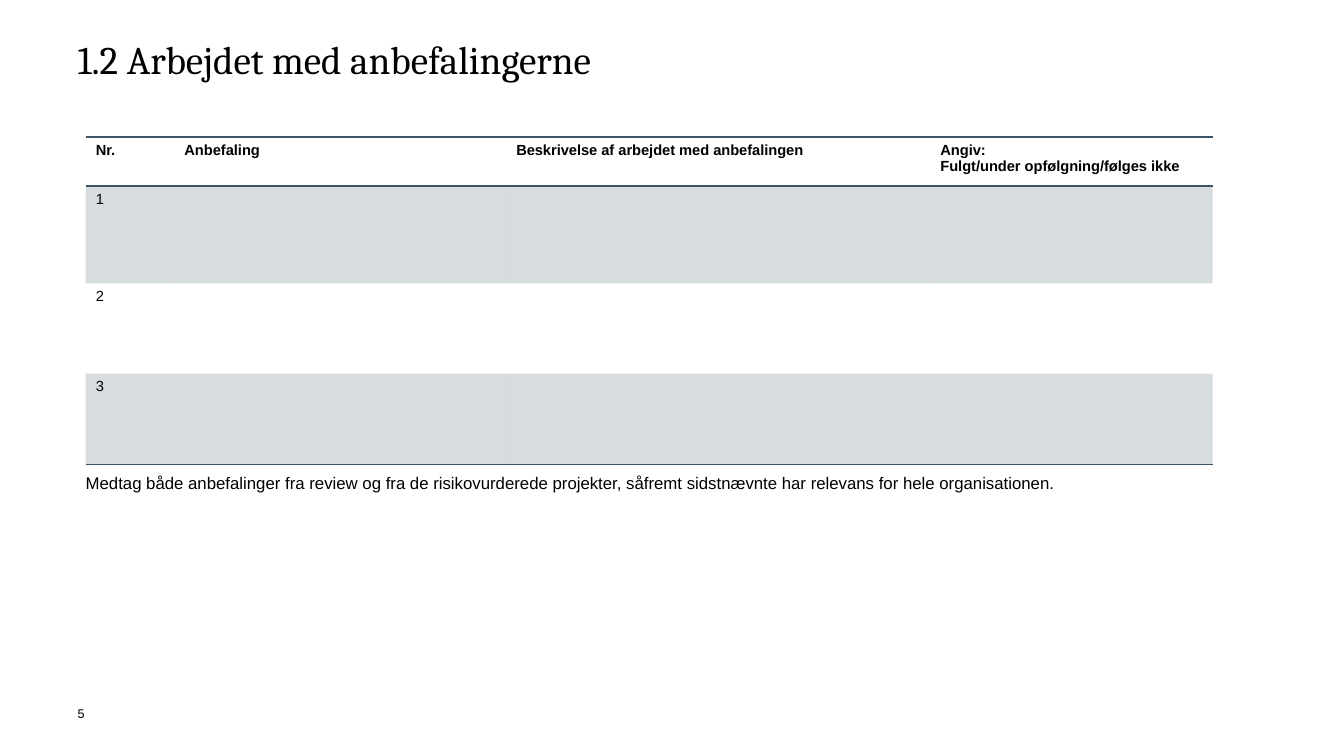
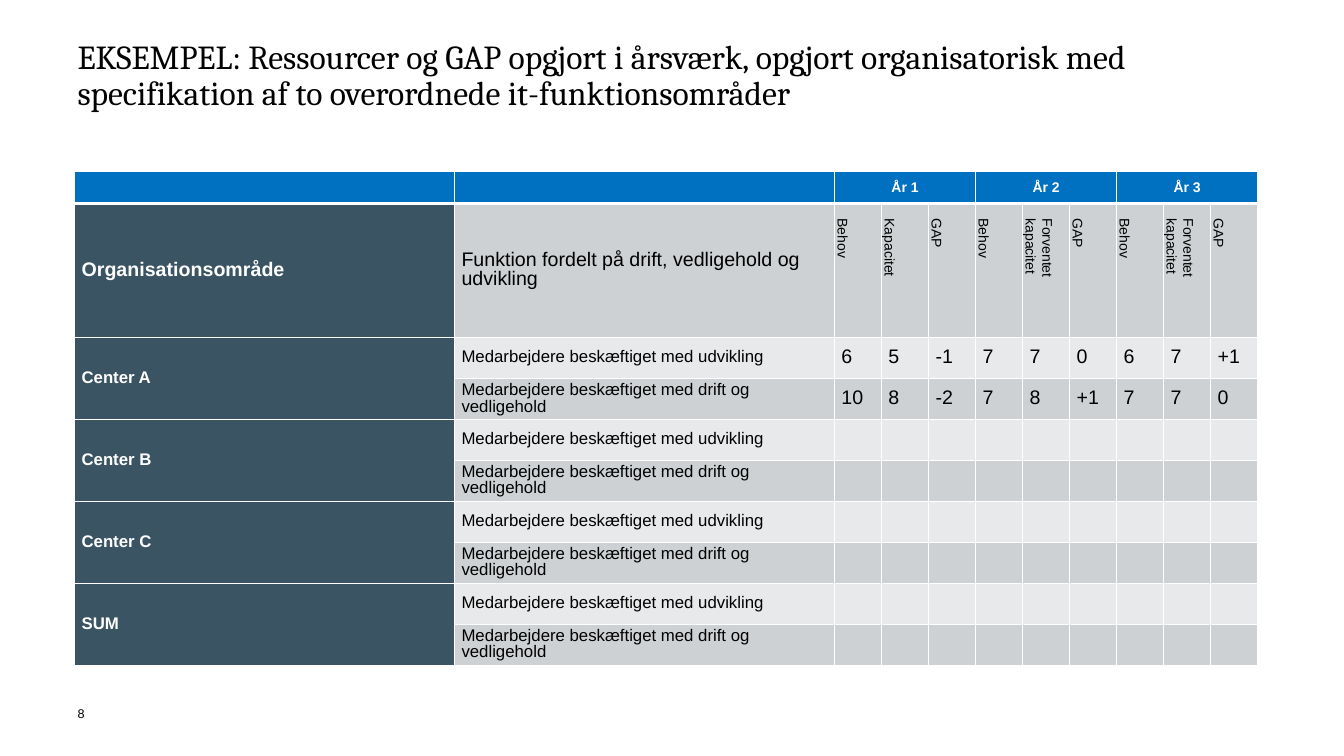
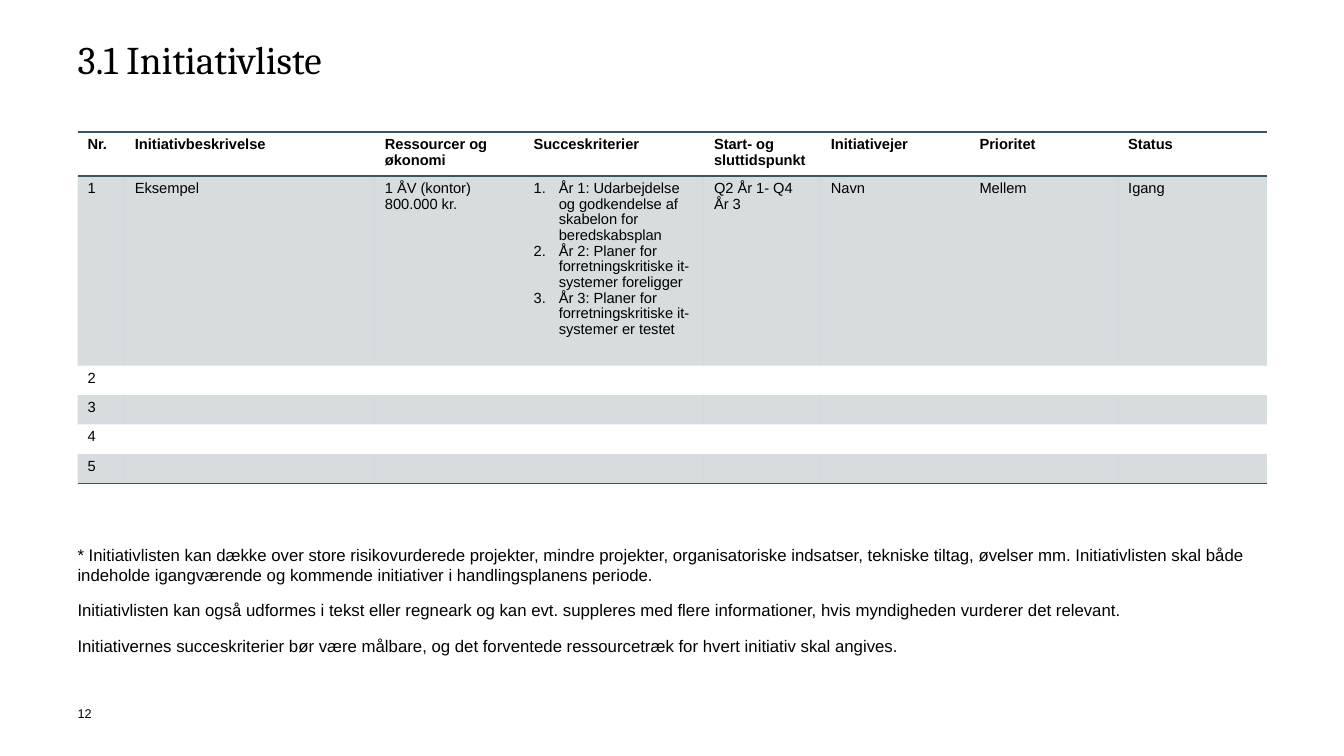
import pptx
import pptx.dml.color
import pptx.enum.text
import pptx.oxml.ns
import pptx.util
from lxml import etree

Pt = pptx.util.Pt
RGBColor = pptx.dml.color.RGBColor
qn = pptx.oxml.ns.qn
MIDDLE = pptx.enum.text.MSO_ANCHOR.MIDDLE
CENTER = pptx.enum.text.PP_ALIGN.CENTER

BLACK = RGBColor(0x00, 0x00, 0x00)
WHITE = RGBColor(0xFF, 0xFF, 0xFF)
SLATE = RGBColor(0x3B, 0x54, 0x63)
BLUE = RGBColor(0x00, 0x70, 0xC0)
GREY = RGBColor(0xCE, 0xD1, 0xD3)
PALE = RGBColor(0xE8, 0xE9, 0xEA)
BODY_FONT = "Arial"
TITLE_FONT = "Cambria"
PLAIN_TABLE_STYLE = "{2D5ABB26-0587-4C30-8999-92F81FD0307C}"
LEFT = 55.4
CONTENT_WIDTH = 849.6


def put_text(frame, text, size, color=BLACK, bold=False, font=BODY_FONT, spacing=1.0, gap=0):
    """Write one paragraph per line of text; an empty text keeps the font size."""
    for index, line in enumerate(text.split("\n")):
        paragraph = frame.paragraphs[0] if index == 0 else frame.add_paragraph()
        paragraph.line_spacing = spacing
        if index and gap:
            paragraph.space_before = Pt(gap)
        if not line:
            etree.SubElement(paragraph._p, qn("a:endParaRPr"), sz=str(int(size * 100)))
            continue
        run = paragraph.add_run()
        run.text = line
        run.font.name = font
        run.font.size = Pt(size)
        run.font.bold = bold
        run.font.color.rgb = color


def style_cell(cell, fill=None, opacity=100, borders=()):
    """Fill a cell and draw its borders, given as (side, colour, points)."""
    properties = cell._tc.get_or_add_tcPr()
    if fill is None:
        cell.fill.background()
    else:
        cell.fill.solid()
        cell.fill.fore_color.rgb = fill
        if opacity < 100:
            shade = properties.find(qn("a:solidFill")).find(qn("a:srgbClr"))
            etree.SubElement(shade, qn("a:alpha"), val=str(opacity * 1000))
    for position, (side, color, width) in enumerate(borders):
        line = etree.Element(qn("a:ln" + side), w=str(Pt(width)))
        line_fill = etree.SubElement(line, qn("a:solidFill"))
        etree.SubElement(line_fill, qn("a:srgbClr"), val=str(color))
        properties.insert(position, line)


presentation = pptx.Presentation()
presentation.slide_width = Pt(960)
presentation.slide_height = Pt(540)

# Titles, page numbers, notes and empty tables
recommendation_note = (
    "Medtag både anbefalinger fra review og fra de risikovurderede projekter, "
    "såfremt sidstnævnte har relevans for hele organisationen."
)
initiative_note = (
    "* Initiativlisten kan dække over store risikovurderede projekter, mindre projekter, "
    "organisatoriske indsatser, tekniske tiltag, øvelser mm. Initiativlisten skal både "
    "indeholde igangværende og kommende initiativer i handlingsplanens periode.\n"
    "Initiativlisten kan også udformes i tekst eller regneark og kan evt. suppleres med flere "
    "informationer, hvis myndigheden vurderer det relevant.\n"
    "Initiativernes succeskriterier bør være målbare, og det forventede ressourcetræk for "
    "hvert initiativ skal angives."
)
resource_title = (
    "EKSEMPEL: Ressourcer og GAP opgjort i årsværk, opgjort organisatorisk med "
    "specifikation af to overordnede it-funktionsområder"
)
# title, title size, page, note (left, top, width, height, text), table (left, top, columns, rows)
pages = [
    ("1.2 Arbejdet med anbefalingerne", 28, "5",
     (61.2, 337.7, 797.8, 49.7, recommendation_note),
     (61.2, 97.9, [63.4, 237, 303, 201.6], [35, 69.5, 64.5, 65])),
    (resource_title, 24, "8", None,
     (53.3, 122.4, [271.4] * 2 + [33.6] * 9, [23, 95.5] + [29.3] * 8)),
    ("3.1 Initiativliste", 28, "12",
     (LEFT, 388.8, CONTENT_WIDTH, 105.8, initiative_note),
     (LEFT, 94.3, [33.8, 178.6, 106.2, 128.9, 83.5] + [106.2] * 3, [30.5, 135.5] + [21] * 4)),
]
tables = []
for title, title_size, page, note, (left, top, columns, rows) in pages:
    slide = presentation.slides.add_slide(presentation.slide_layouts[6])
    texts = [
        ((LEFT, 28.8, CONTENT_WIDTH, 73.4), title, title_size, TITLE_FONT, 0.9),
        ((LEFT, 504, 22.3, 21.6), page, 9, BODY_FONT, 1.0),
    ]
    if note:
        texts.append((note[:4], note[4], 12, BODY_FONT, 1.0))
    for place, text, size, font, spacing in texts:
        frame = slide.shapes.add_textbox(*map(Pt, place)).text_frame
        frame.word_wrap = True
        frame.margin_left = frame.margin_top = frame.margin_right = frame.margin_bottom = 0
        put_text(frame, text, size, font=font, spacing=spacing, gap=11)

    table = slide.shapes.add_table(
        len(rows), len(columns), Pt(left), Pt(top), Pt(sum(columns)), Pt(sum(rows))
    ).table
    table.first_row = table.horz_banding = False
    table._tbl.tblPr.find(qn("a:tableStyleId")).text = PLAIN_TABLE_STYLE
    for column, width in zip(table.columns, columns):
        column.width = Pt(width)
    for row, height in zip(table.rows, rows):
        row.height = Pt(height)
    tables.append(table)

recommendations, resources, initiatives = tables

# Numbered lists with shaded odd rows
recommendation_rows = [
    ["Nr.", "Anbefaling", "Beskrivelse af arbejdet med anbefalingen",
     "Angiv:\nFulgt/under opfølgning/følges ikke"],
    ["1"], ["2"], ["3"],
]
initiative_rows = [
    ["Nr.", "Initiativbeskrivelse", "Ressourcer og økonomi", "Succeskriterier",
     "Start- og sluttidspunkt", "Initiativejer", "Prioritet", "Status"],
    ["1", "Eksempel", "1 ÅV (kontor)\n800.000 kr.",
     "År 1: Udarbejdelse og godkendelse af skabelon for beredskabsplan\n"
     "År 2: Planer for forretningskritiske it-systemer foreligger\n"
     "År 3: Planer for forretningskritiske it-systemer er testet",
     "Q2 År 1- Q4 År 3", "Navn", "Mellem", "Igang"],
    ["2"], ["3"], ["4"], ["5"],
]
for table, content, spacing in [
    (recommendations, recommendation_rows, 1.0),
    (initiatives, initiative_rows, 0.96),
]:
    for r, row in enumerate(table.rows):
        if r == 0:
            borders = [("T", SLATE, 1), ("B", SLATE, 1)]
        elif r == len(content) - 1:
            borders = [("B", SLATE, 1)]
        else:
            borders = []
        for c, cell in enumerate(row.cells):
            text = content[r][c] if c < len(content[r]) else ""
            put_text(cell.text_frame, text, 10.5, bold=r == 0, spacing=spacing)
            style_cell(cell, SLATE if r % 2 else None, 20, borders)

for criterion in initiatives.cell(1, 3).text_frame.paragraphs:
    numbering = criterion._p.get_or_add_pPr()
    numbering.set("marL", str(Pt(18)))
    numbering.set("indent", str(-Pt(18)))
    etree.SubElement(numbering, qn("a:buAutoNum"), type="arabicPeriod")

# Resources and gap per centre and year
functions = [
    "Medarbejdere beskæftiget med udvikling",
    "Medarbejdere beskæftiget med drift og vedligehold",
]
measures = ["Behov", "Kapacitet", "GAP"] + ["Behov", "Forventet kapacitet", "GAP"] * 2
figures = [
    ["6", "5", "-1", "7", "7", "0", "6", "7", "+1"],
    ["10", "8", "-2", "7", "8", "+1", "7", "7", "0"],
]
resource_rows = [
    ["", "", "År 1", "", "", "År 2", "", "", "År 3", "", ""],
    ["Organisationsområde", "Funktion fordelt på drift, vedligehold og udvikling"] + measures,
]
for centre in ["Center A", "Center B", "Center C", "SUM"]:
    for f, function in enumerate(functions):
        values = figures[f] if centre == "Center A" else [""] * 9
        resource_rows.append([centre if f == 0 else "", function] + values)

for first in (2, 5, 8):
    resources.cell(0, first).merge(resources.cell(0, first + 2))
for first in (2, 4, 6, 8):
    resources.cell(first, 0).merge(resources.cell(first + 1, 0))

for r, texts in enumerate(resource_rows):
    for c, text in enumerate(texts):
        cell = resources.cell(r, c)
        is_measure = r == 1 and c >= 2
        if r == 0:
            fill, size = BLUE, 10
        else:
            fill = SLATE if c == 0 else GREY if r % 2 else PALE
            size = 10 if is_measure else 14 if r == 1 or c >= 2 else 12
        heading = r == 0 or c == 0
        cell.vertical_anchor = MIDDLE
        cell.margin_left = cell.margin_right = Pt(5)
        cell.margin_top = cell.margin_bottom = 0
        put_text(cell.text_frame, text, size, WHITE if heading else BLACK, heading,
                 spacing=Pt(max(size, 12)))
        paragraph = cell.text_frame.paragraphs[0]
        if r == 0:
            paragraph.alignment = CENTER
        if is_measure:
            cell._tc.get_or_add_tcPr().set("vert", "vert")
            paragraph._p.get_or_add_pPr().set("marL", str(Pt(5.8)))
        top_width = 3 if r == 1 else 1
        bottom_width = 3 if r == 0 else 1
        style_cell(cell, fill, borders=[("L", WHITE, 1), ("R", WHITE, 1),
                                        ("T", WHITE, top_width), ("B", WHITE, bottom_width)])

presentation.save("out.pptx")
